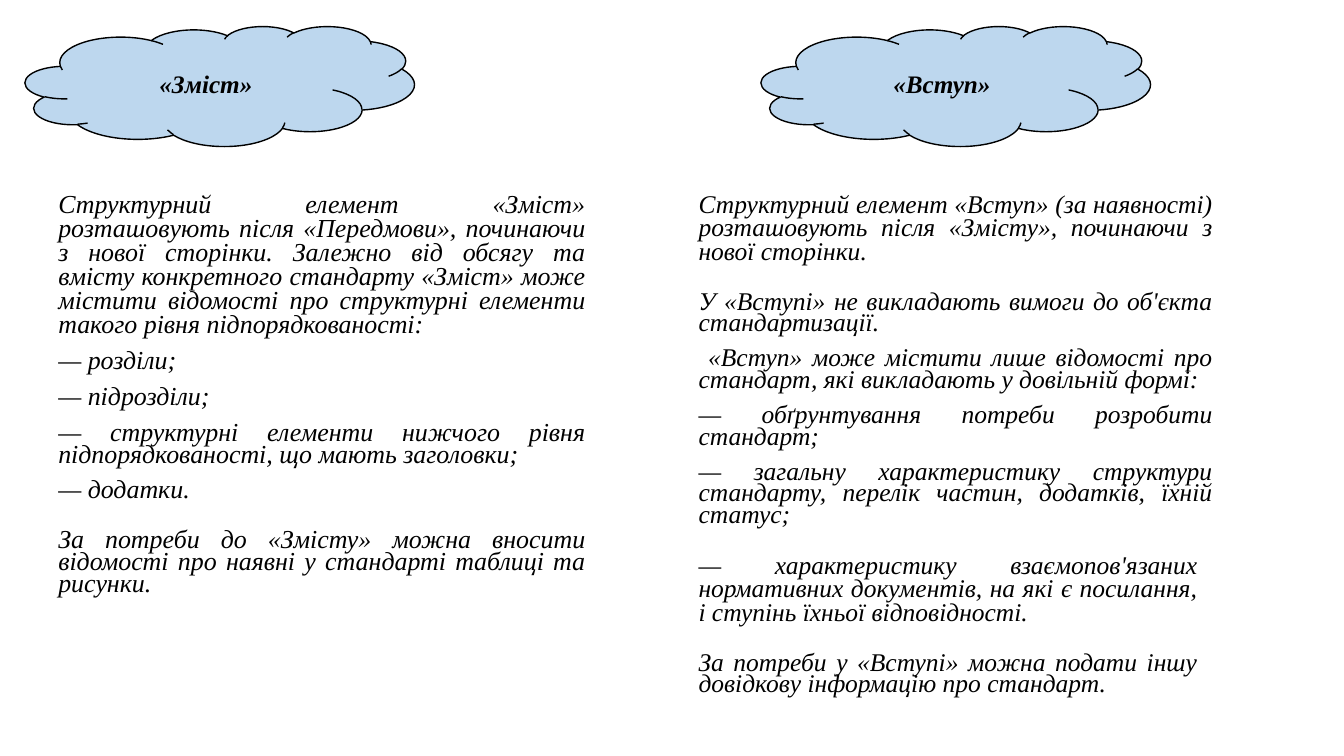
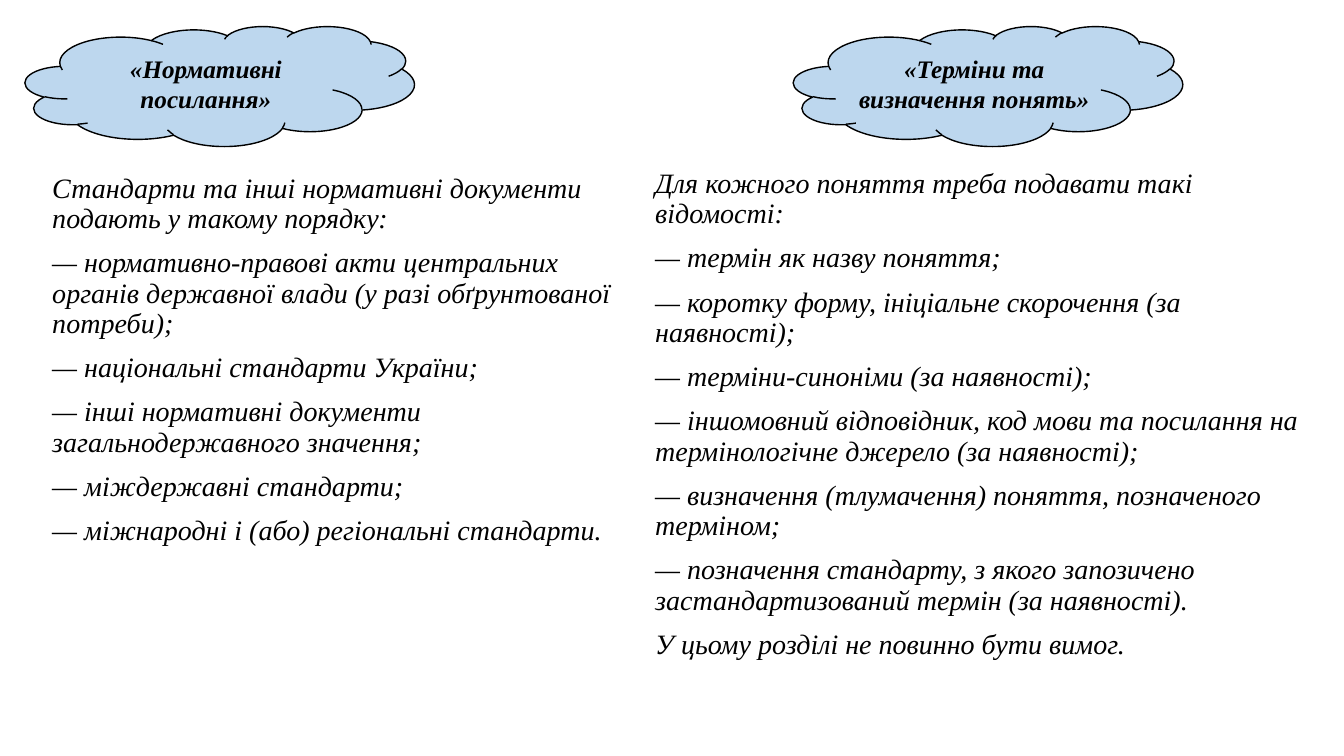
from dataclasses import dataclass

from pptx import Presentation
from pptx.dml.color import RGBColor
from pptx.enum.shapes import MSO_SHAPE as Preset
from pptx.enum.text import MSO_ANCHOR as Anchor, PP_ALIGN as Align
from pptx.util import Emu, Pt

PX = 9144  # 100 px to the inch
BLANK_LAYOUT = 6


@dataclass(frozen=True)
class Theme:
    font: str = "Times New Roman"
    ink: RGBColor = RGBColor(0x00, 0x00, 0x00)
    cloud: RGBColor = RGBColor(0xBD, 0xD7, 0xEE)
    outline: float = 1
    heading: float = 18
    contents: float = 18.5
    introduction: float = 18.2
    listing: float = 20
    gap: float = 10
    wide_gap: float = 20
    normal: float = 0.9
    loose: float = 0.77
    tight: float = 0.7


THEME = Theme()


@dataclass(frozen=True)
class Item:
    """A paragraph whose spacing or right indent departs from its column."""
    text: str
    spacing: float = THEME.tight
    before: float = THEME.gap
    right_indent: int = 0


@dataclass(frozen=True)
class Column:
    heading: str
    cloud_left: int
    area: tuple
    items: tuple
    size: float = THEME.listing
    spacing: float = THEME.normal
    align: Align = Align.LEFT
    right_inset: int = 10


CONTENTS = Column(
    "«Зміст»", 25, (48, 188, 542, 476),
    (
        Item("Структурний елемент «Зміст» розташовують після «Передмови», "
             "починаючи з нової сторінки. Залежно від обсягу та вмісту "
             "конкретного стандарту «Зміст» може містити відомості про "
             "структурні елементи такого рівня підпорядкованості:",
             spacing=THEME.loose),
        "— розділи;",
        "— підрозділи;",
        "— структурні елементи нижчого рівня підпорядкованості, "
        "що мають заголовки;",
        "— додатки.",
        Item("За потреби до «Змісту» можна вносити відомості про наявні "
             "у стандарті таблиці та рисунки.", before=THEME.wide_gap),
    ),
    size=THEME.contents, spacing=THEME.tight, align=Align.JUSTIFY,
)

INTRODUCTION = Column(
    "«Вступ»", 755, (683, 188, 584, 476),
    (
        Item("Структурний елемент «Вступ» (за наявності) розташовують після "
             "«Змісту», починаючи з нової сторінки.", spacing=THEME.loose),
        Item("У «Вступі» не викладають вимоги до об'єкта стандартизації.",
             before=THEME.wide_gap),
        " «Вступ» може містити лише відомості про стандарт, "
        "які викладають у довільній формі:",
        "— обґрунтування потреби розробити стандарт;",
        "— загальну характеристику структури стандарту, перелік частин, "
        "додатків, їхній статус;",
        Item("— характеристику взаємопов'язаних нормативних документів, "
             "на які є посилання, і ступінь їхньої відповідності.",
             spacing=THEME.loose, before=THEME.wide_gap, right_indent=15),
        Item("За потреби у «Вступі» можна подати іншу довідкову інформацію "
             "про стандарт.", before=THEME.wide_gap, right_indent=15),
    ),
    size=THEME.introduction, spacing=THEME.tight, align=Align.JUSTIFY,
    right_inset=64,
)

REFERENCES = Column(
    "«Нормативні посилання»", 25, (42, 168, 583, 493),
    (
        "Стандарти та інші нормативні документи подають у такому порядку:",
        "— нормативно-правові акти центральних органів державної влади "
        "(у разі обґрунтованої потреби);",
        "— національні стандарти України;",
        "— інші нормативні документи загальнодержавного значення;",
        "— міждержавні стандарти;",
        "— міжнародні і (або) регіональні стандарти.",
    ),
)

TERMS = Column(
    "«Терміни та визначення понять»", 787, (640, 163, 680, 498),
    (
        "Для кожного поняття треба подавати такі відомості:",
        "— термін як назву поняття;",
        "— коротку форму, ініціальне скорочення (за наявності);",
        "— терміни-синоніми (за наявності);",
        "— іншомовний відповідник, код мови та посилання на термінологічне "
        "джерело (за наявності);",
        "— визначення (тлумачення) поняття, позначеного терміном;",
        "— позначення стандарту, з якого запозичено застандартизований "
        "термін (за наявності).",
        "У цьому розділі не повинно бути вимог.",
    ),
)

SLIDES = ((CONTENTS, INTRODUCTION), (REFERENCES, TERMS))


def px(*lengths):
    return [Emu(length * PX) for length in lengths]


def write(para, text, *, size, bold=False, align=Align.LEFT, spacing=1.0,
          before=0, right_indent=0):
    para.alignment = align
    para.line_spacing = spacing
    para.space_before = Pt(before)
    if right_indent:
        para._p.get_or_add_pPr().set("marR", str(right_indent * PX))
    span = para.add_run()
    span.text = text
    font = span.font
    font.name, font.size = THEME.font, Pt(size)
    font.bold, font.italic = bold, True
    font.color.rgb = THEME.ink


def add_cloud(page, left, heading):
    cloud = page.shapes.add_shape(Preset.CLOUD, *px(left, 26, 386, 119))
    cloud.shadow.inherit = False
    cloud.fill.solid()
    cloud.fill.fore_color.rgb = THEME.cloud
    cloud.line.color.rgb = THEME.ink
    cloud.line.width = Pt(THEME.outline)
    frame = cloud.text_frame
    frame.word_wrap = True
    frame.vertical_anchor = Anchor.MIDDLE
    write(frame.paragraphs[0], heading, size=THEME.heading, bold=True,
          align=Align.CENTER)


def add_body(page, column):
    frame = page.shapes.add_textbox(*px(*column.area)).text_frame
    frame.word_wrap = True
    frame.margin_right = Emu(column.right_inset * PX)
    for index, entry in enumerate(column.items):
        item = entry if isinstance(entry, Item) else Item(entry, column.spacing)
        para = frame.add_paragraph() if index else frame.paragraphs[0]
        write(para, item.text, size=column.size, align=column.align,
              spacing=item.spacing, before=item.before,
              right_indent=item.right_indent)


def main():
    deck = Presentation()
    deck.slide_width, deck.slide_height = px(1333, 750)
    for columns in SLIDES:
        page = deck.slides.add_slide(deck.slide_layouts[BLANK_LAYOUT])
        for column in columns:
            add_body(page, column)
            add_cloud(page, column.cloud_left, column.heading)
    deck.save("out.pptx")


if __name__ == "__main__":
    main()
